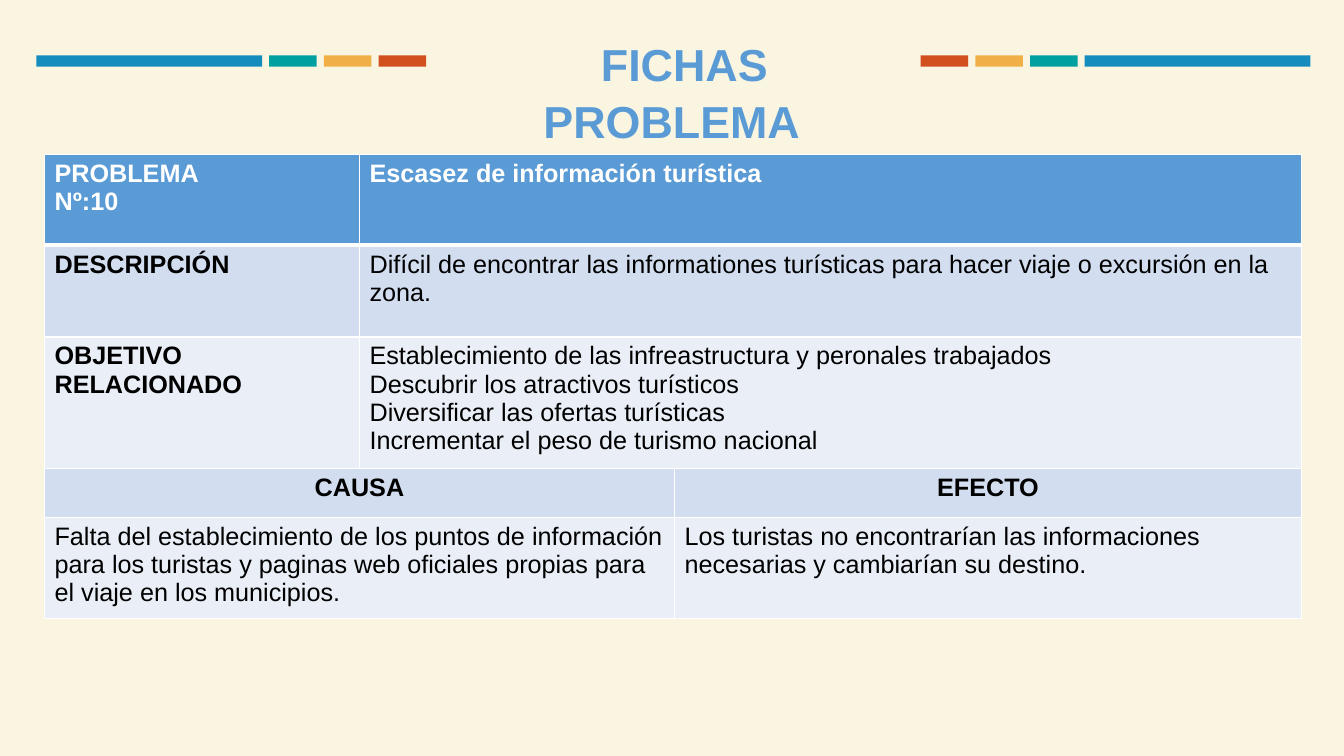
import pptx
import pptx.util
import pptx.dml.color
import pptx.enum.shapes
import pptx.enum.text
import pptx.oxml.ns
from lxml import etree

Pt = pptx.util.Pt
CENTER = pptx.enum.text.PP_ALIGN.CENTER


def paint(fill, color):
    fill.solid()
    fill.fore_color.rgb = pptx.dml.color.RGBColor.from_string(color)


def set_border(cell, side, width):
    """Draw one white edge of a cell; side is L, R, T or B."""
    qn = pptx.oxml.ns.qn
    ln = etree.Element(qn("a:ln" + side), w=str(Pt(width)))
    fill = etree.SubElement(ln, qn("a:solidFill"))
    etree.SubElement(fill, qn("a:srgbClr"), val="FFFFFF")
    # Edges must stand before the cell fill, in the order L, R, T, B
    cell._tc.get_or_add_tcPr().insert("LRTB".index(side), ln)


prs = pptx.Presentation()
prs.slide_width, prs.slide_height = Pt(960), Pt(540)
s = prs.slides.add_slide(prs.slide_layouts[6])
paint(s.background.fill, "FAF5E1")

# Colour bars, mirrored about the middle of the slide
bars = [(26, 161.3, "148CBE"), (192.2, 34, "00A0A0"),
        (231.3, 34, "F0AF47"), (270.4, 34, "D2501E")]
for left, width, color in bars:
    for x in (left, 962 - left - width):
        bar = s.shapes.add_shape(pptx.enum.shapes.MSO_SHAPE.RECTANGLE,
                                 Pt(x), Pt(39.6), Pt(width), Pt(8))
        bar.shadow.inherit = False
        paint(bar.fill, color)
        bar.line.fill.background()

# Title
title = s.shapes.add_textbox(Pt(308.2), Pt(20.9), Pt(343.4), Pt(84))
tf = title.text_frame
tf.word_wrap = True
tf.margin_left = tf.margin_right = Pt(36)
p = tf.paragraphs[0]
p.text = "FICHAS PROBLEMA"
p.alignment = CENTER
p.line_spacing = 1.05
p._p.get_or_add_pPr().set("indent", str(Pt(18)))
p.font.name, p.font.size, p.font.bold = "Arial", Pt(32), True
paint(p.font.fill, "5B9BD5")

# Problem sheet: row height, fill, text colour, first column of the right cell, texts
rows = [
    (65, "5B9BD5", "FFFFFF", 1, "PROBLEMA\nNº:10", "Escasez de información turística"),
    (65.5, "D2DEEF", "000000", 1, "DESCRIPCIÓN",
     "Difícil de encontrar las informationes turísticas para hacer viaje o excursión en la zona."),
    (94, "EAEFF7", "000000", 1, "OBJETIVO RELACIONADO",
     "Establecimiento de las infreastructura y peronales trabajados\n"
     "Descubrir los atractivos turísticos\n"
     "Diversificar las ofertas turísticas\n"
     "Incrementar el peso de turismo nacional"),
    (35, "D2DEEF", "000000", 2, "CAUSA", "EFECTO"),
    (71.5, "EAEFF7", "000000", 2,
     "Falta del establecimiento de los puntos de información para los turistas "
     "y paginas web oficiales propias para el viaje en los municipios.",
     "Los turistas no encontrarían las informaciones necesarias y cambiarían su destino."),
]
table = s.shapes.add_table(len(rows), 3, Pt(31.8), Pt(110.2), Pt(898), Pt(331)).table
for column, width in zip(table.columns, (225, 225, 448)):
    column.width = Pt(width)

for i, (height, fill, color, split, left_text, right_text) in enumerate(rows):
    table.rows[i].height = Pt(height)
    for j in range(3):
        cell = table.cell(i, j)
        paint(cell.fill, fill)
        for side in "LRTB":
            thick = (i, side) in ((0, "B"), (1, "T"))
            set_border(cell, side, 3 if thick else 1)
    if split == 1:
        table.cell(i, 1).merge(table.cell(i, 2))
    else:
        table.cell(i, 0).merge(table.cell(i, 1))
    for j, text in ((0, left_text), (split, right_text)):
        tf = table.cell(i, j).text_frame
        tf.text = text
        for p in tf.paragraphs:
            p.font.name, p.font.size = "Arial", Pt(18)
            p.font.bold = i in (0, 3) or (j == 0 and i < 3)
            paint(p.font.fill, color)
            if i == 3:
                p.alignment = CENTER

prs.save("out.pptx")
